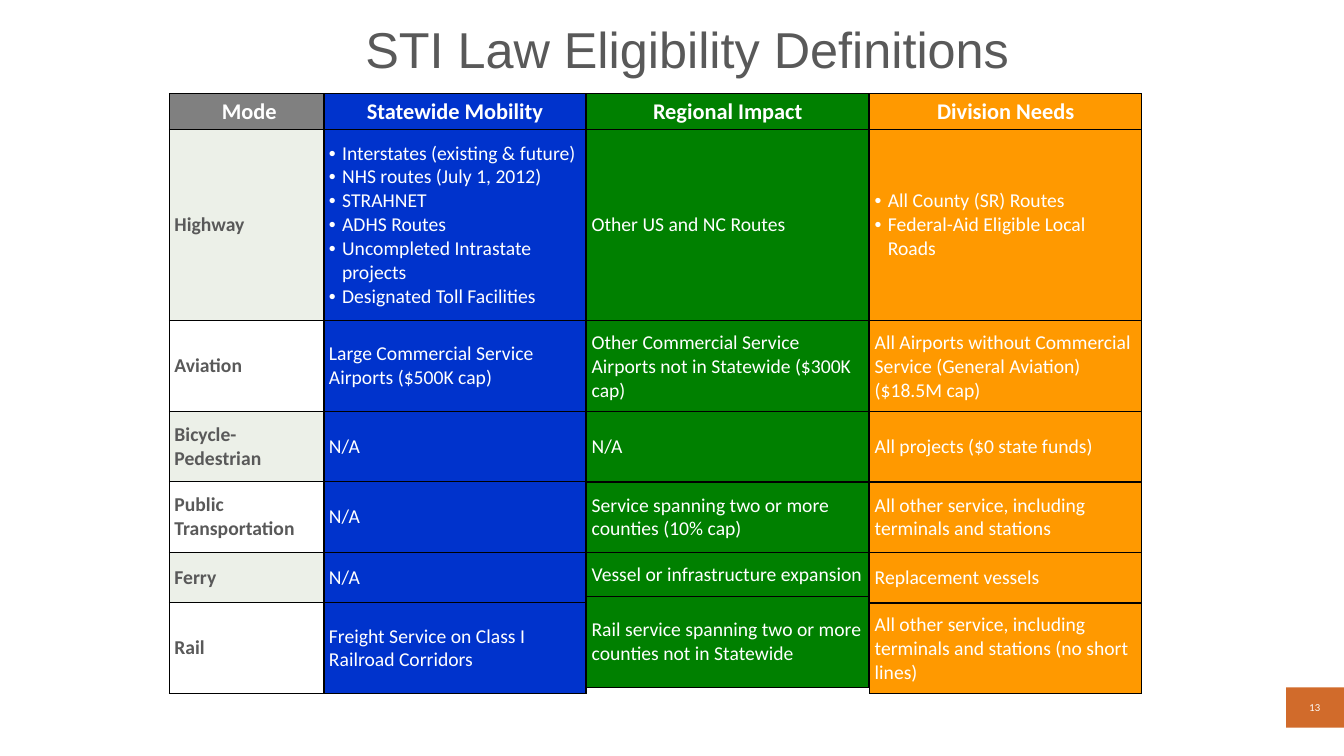
from lxml import etree
from pptx import Presentation
from pptx.dml.color import RGBColor
from pptx.enum.shapes import MSO_SHAPE
from pptx.enum.text import MSO_ANCHOR, PP_ALIGN
from pptx.oxml.ns import qn
from pptx.util import Pt

RECTANGLE = MSO_SHAPE.RECTANGLE
MIDDLE = MSO_ANCHOR.MIDDLE
LEFT, CENTER = PP_ALIGN.LEFT, PP_ALIGN.CENTER

WHITE = RGBColor(0xFF, 0xFF, 0xFF)
BLACK = RGBColor(0x00, 0x00, 0x00)
INK = RGBColor(0x59, 0x59, 0x59)
GRAY = RGBColor(0x80, 0x80, 0x80)
SAGE = RGBColor(0xEC, 0xF0, 0xE8)
BLUE = RGBColor(0x00, 0x33, 0xCC)
GREEN = RGBColor(0x00, 0x80, 0x00)
ORANGE = RGBColor(0xFF, 0x99, 0x00)
RUST = RGBColor(0xD1, 0x6B, 0x2B)

TABLE_TOP = 67
BULLET_INDENT = 9.4

MODES = [" Mode", "Highway", "Aviation", "Bicycle-Pedestrian",
         "Public Transportation", "Ferry", "Rail"]
STATEWIDE = [
    "Statewide Mobility",
    ["Interstates (existing & future)", "NHS routes (July 1, 2012)", "STRAHNET",
     "ADHS Routes", "Uncompleted Intrastate projects", "Designated Toll Facilities"],
    "Large Commercial Service Airports ($500K cap)",
    "N/A",
    "N/A",
    "N/A",
    "Freight Service on Class I Railroad Corridors",
]
REGIONAL = [
    "Regional Impact",
    "Other US and NC Routes",
    "Other Commercial Service Airports not in Statewide ($300K cap)",
    "N/A",
    "Service spanning two or more counties (10% cap)",
    "Vessel or infrastructure expansion",
    "Rail service spanning two or more counties not in Statewide",
]
DIVISION = [
    "Division Needs",
    ["All County (SR) Routes", "Federal-Aid Eligible Local Roads"],
    "All Airports without Commercial Service (General Aviation) ($18.5M cap)",
    "All projects ($0 state funds)",
    "All other service, including terminals and stations",
    "Replacement vessels",
    "All other service, including terminals and stations (no short lines)",
]


def row_heights(ferry=36):
    return [25.2, 136.8, 64.8, 50.4, 50.4, ferry, 64.8]


def write(frame, content, size=14, font="Calibri", color=WHITE, bold=False,
          align=LEFT, spacing=None):
    bulleted = isinstance(content, list)
    frame.word_wrap = True
    for index, line in enumerate(content if bulleted else [content]):
        para = frame.paragraphs[0] if index == 0 else frame.add_paragraph()
        para.alignment = align
        if spacing:
            para.line_spacing = spacing
        if bulleted:
            properties = para._p.get_or_add_pPr()
            properties.set("marL", str(Pt(BULLET_INDENT)))
            properties.set("indent", str(-Pt(BULLET_INDENT)))
            etree.SubElement(properties, qn("a:buFont"), typeface="Arial")
            etree.SubElement(properties, qn("a:buChar"), char="•")
        span = para.add_run()
        span.text = line
        span.font.size = Pt(size)
        span.font.name = font
        span.font.bold = bold
        span.font.color.rgb = color


class Page:
    def __init__(self, slide, border=BLACK, border_width=1):
        self.slide = slide
        self.border = border
        self.border_width = border_width

    def title(self, text, left, top, width, height):
        box = self.slide.shapes.add_textbox(Pt(left), Pt(top), Pt(width), Pt(height))
        box.text_frame.vertical_anchor = MIDDLE
        write(box.text_frame, text, size=36, font="Arial", color=INK,
              align=CENTER, spacing=0.9)

    def badge(self, text, left, top, width, height):
        box = self.slide.shapes.add_shape(
            RECTANGLE, Pt(left), Pt(top), Pt(width), Pt(height))
        box.shadow.inherit = False
        box.fill.solid()
        box.fill.fore_color.rgb = RUST
        box.line.fill.background()
        box.text_frame.vertical_anchor = MIDDLE
        write(box.text_frame, text, size=6.8, font="Lato", align=CENTER)

    def outline(self, cell):
        properties = cell._tc.get_or_add_tcPr()
        for side in ("a:lnL", "a:lnR", "a:lnT", "a:lnB"):
            edge = etree.SubElement(properties, qn(side), w=str(Pt(self.border_width)))
            fill = etree.SubElement(edge, qn("a:solidFill"))
            etree.SubElement(fill, qn("a:srgbClr"), val=str(self.border))

    def cell(self, cell, content, fill, color, bold, header):
        self.outline(cell)
        cell.fill.solid()
        cell.fill.fore_color.rgb = fill
        cell.vertical_anchor = MIDDLE
        cell.margin_left = cell.margin_right = Pt(5 if header else 3.6)
        cell.margin_top = cell.margin_bottom = Pt(0 if header else 7.2)
        write(cell.text_frame, content, size=16 if header else 14, color=color,
              bold=bold, align=CENTER if header else LEFT)

    def table(self, left, columns, widths, heights):
        table = self.slide.shapes.add_table(
            len(heights), len(widths), Pt(left), Pt(TABLE_TOP),
            Pt(sum(widths)), Pt(sum(heights))).table
        table.first_row = False
        table.horz_banding = False
        for row, height in zip(table.rows, heights):
            row.height = Pt(height)
        for column, (entries, fill) in enumerate(columns):
            table.columns[column].width = Pt(widths[column])
            for row, content in enumerate(entries):
                header = row == 0
                label = entries is MODES and not header
                shade = (SAGE if row % 2 else WHITE) if label else fill
                self.cell(table.cell(row, column), content, shade,
                          INK if label else WHITE, header or label, header)


def main():
    deck = Presentation()
    deck.slide_width, deck.slide_height = Pt(960), Pt(540)
    page = Page(deck.slides.add_slide(deck.slide_layouts[6]))
    page.title("STI Law Eligibility Definitions", 180.7, 10.8, 620.6, 52.6)
    page.table(121, [(MODES, GRAY), (STATEWIDE, BLUE)], [110.4, 187.2], row_heights())
    page.table(419, [(REGIONAL, GREEN)], [201.6], row_heights(ferry=31.5))
    page.table(621.2, [(DIVISION, ORANGE)], [194.4], row_heights())
    page.badge("13", 918.6, 491, 41.4, 28.8)
    deck.save("out.pptx")


if __name__ == "__main__":
    main()
